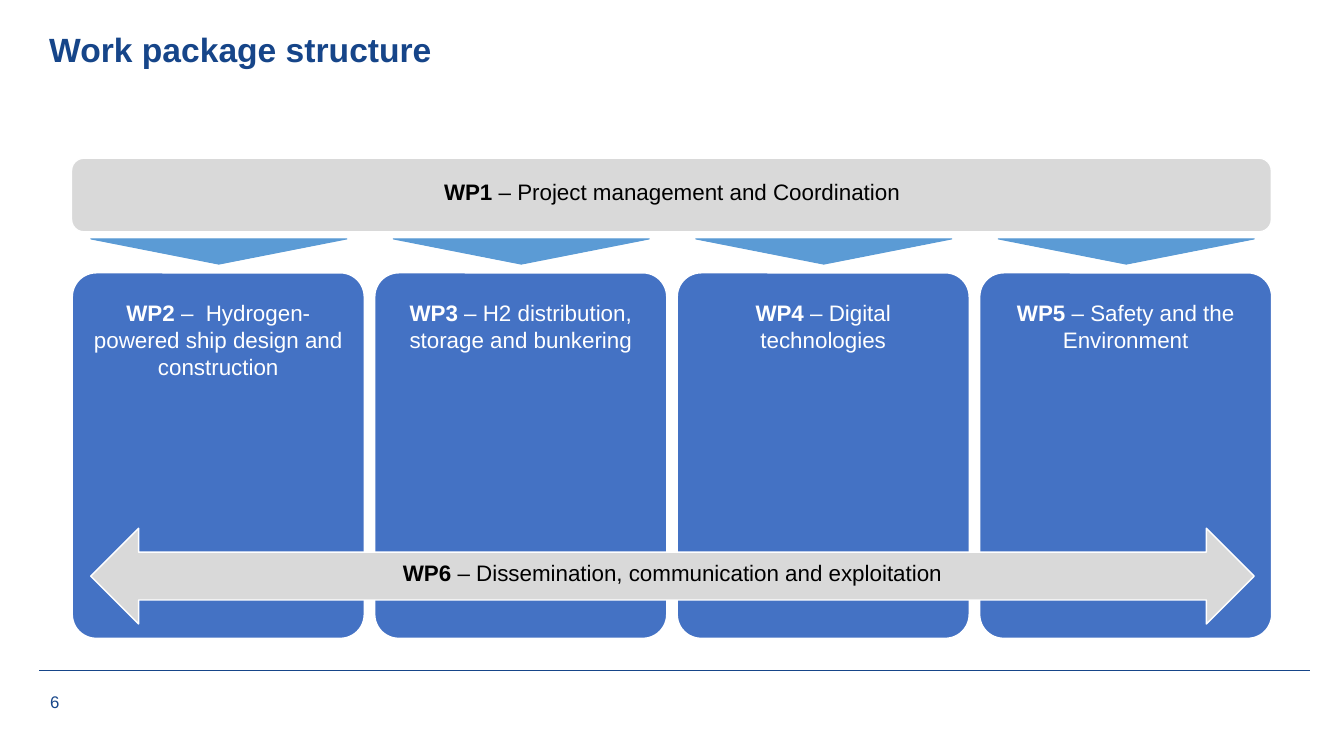
from dataclasses import dataclass

import pptx
import pptx.dml.color
import pptx.enum.shapes
import pptx.enum.text
import pptx.oxml
import pptx.util
from pptx.util import Inches, Pt

KIND = pptx.enum.shapes.MSO_SHAPE
ALIGN = pptx.enum.text.PP_ALIGN
ANCHOR = pptx.enum.text.MSO_ANCHOR


@dataclass(frozen=True)
class Theme:
    font: str = "Arial"
    navy: str = "164589"
    blue: str = "4472C4"
    sky: str = "5B9BD5"
    grey: str = "D9D9D9"
    white: str = "FFFFFF"
    black: str = "000000"
    title: int = 24
    body: int = 16
    small: int = 12


@dataclass(frozen=True)
class Box:
    left: float
    top: float
    width: float
    height: float

    def shift(self, step: float) -> "Box":
        return Box(self.left + step, self.top, self.width, self.height)

    def place(self) -> tuple:
        return tuple(map(Inches, (self.left, self.top, self.width, self.height)))


@dataclass(frozen=True)
class Pack:
    code: str
    name: str


THEME = Theme()
PITCH = 3.0
CARD = Box(0.71, 2.7, 2.91, 3.64)
WEDGE = Box(0.9, 2.37, 2.54, 0.25)
LEAD = Pack("WP1", "Project management and Coordination")
REACH = Pack("WP6", "Dissemination, communication and exploitation")
PACKS = [
    Pack("WP2", " Hydrogen-powered ship design and construction"),
    Pack("WP3", "H2 distribution, storage and bunkering"),
    Pack("WP4", "Digital technologies"),
    Pack("WP5", "Safety and the Environment"),
]


def tint(code: str) -> pptx.dml.color.RGBColor:
    return pptx.dml.color.RGBColor.from_string(code)


def style(run, size: int, color: str, bold: bool = False) -> None:
    run.font.name = THEME.font
    run.font.size = Pt(size)
    run.font.bold = bold
    run.font.color.rgb = tint(color)


def add_form(slide, kind, box: Box, fill: str, edge: str, width: float):
    form = slide.shapes.add_shape(kind, *box.place())
    form.shadow.inherit = False
    form.fill.solid()
    form.fill.fore_color.rgb = tint(fill)
    form.line.color.rgb = tint(edge)
    form.line.width = Pt(width)
    return form


def add_text(slide, box: Box, text: str, size: int, bold: bool = False):
    frame = slide.shapes.add_textbox(*box.place()).text_frame
    frame.word_wrap = True
    frame.text = text
    para = frame.paragraphs[0]
    style(para.runs[0], size, THEME.navy, bold)
    return para


def write_pack(frame, pack: Pack, color: str, pads: tuple) -> None:
    """Write a bold code and a plain name; pads are left, top, right, bottom."""
    frame.word_wrap = True
    frame.vertical_anchor = ANCHOR.TOP
    (frame.margin_left, frame.margin_top,
     frame.margin_right, frame.margin_bottom) = map(Inches, pads)
    para = frame.paragraphs[0]
    para.alignment = ALIGN.CENTER
    para.text = f"{pack.code} "
    style(para.runs[0], THEME.body, color, True)
    name = para.add_run()
    name.text = f"– {pack.name}"
    style(name, THEME.body, color)


def add_label(slide, box: Box, pack: Pack) -> None:
    label = slide.shapes.add_textbox(*box.place())
    write_pack(label.text_frame, pack, THEME.black, (0, 0, 0, 0))


def add_rule(slide) -> None:
    rule = slide.shapes.add_connector(
        pptx.enum.shapes.MSO_CONNECTOR.STRAIGHT,
        Inches(0.39), Inches(6.65), Inches(12.99), Inches(6.65))
    rule.line.color.rgb = tint(THEME.navy)
    rule.line.width = Pt(1)
    props = rule._element.spPr
    props.append(pptx.oxml.parse_xml(
        '<a:effectLst xmlns:a="http://schemas.openxmlformats.org/drawingml/2006/main"/>'))


def main() -> None:
    deck = pptx.Presentation()
    deck.slide_width, deck.slide_height = Inches(13.33), Inches(7.5)
    slide = deck.slides.add_slide(deck.slide_layouts[6])

    add_rule(slide)
    title = add_text(slide, Box(0.39, 0.28, 9.64, 0.47),
                     "Work package structure", THEME.title, True)
    title.line_spacing = 0.9
    add_text(slide, Box(0.4, 6.81, 2.67, 0.4), "6", THEME.small)

    for index, pack in enumerate(PACKS):
        step = index * PITCH
        card = add_form(slide, KIND.ROUNDED_RECTANGLE, CARD.shift(step),
                        THEME.blue, THEME.white, 2)
        card.adjustments[0] = 0.084
        write_pack(card.text_frame, pack, THEME.white, (0.1, 0.2, 0.1, 0.05))
        wedge = add_form(slide, KIND.ISOSCELES_TRIANGLE, WEDGE.shift(step),
                         THEME.sky, THEME.sky, 0.75)
        wedge.rotation = 180

    add_form(slide, KIND.ROUNDED_RECTANGLE, Box(0.71, 1.57, 11.9, 0.73),
             THEME.grey, THEME.white, 1)
    add_label(slide, Box(2.37, 1.77, 8.59, 0.27), LEAD)
    add_form(slide, KIND.LEFT_RIGHT_ARROW, Box(0.9, 5.24, 11.54, 0.95),
             THEME.grey, THEME.white, 1)
    add_label(slide, Box(1.97, 5.55, 9.4, 0.27), REACH)

    deck.save("out.pptx")


if __name__ == "__main__":
    main()
